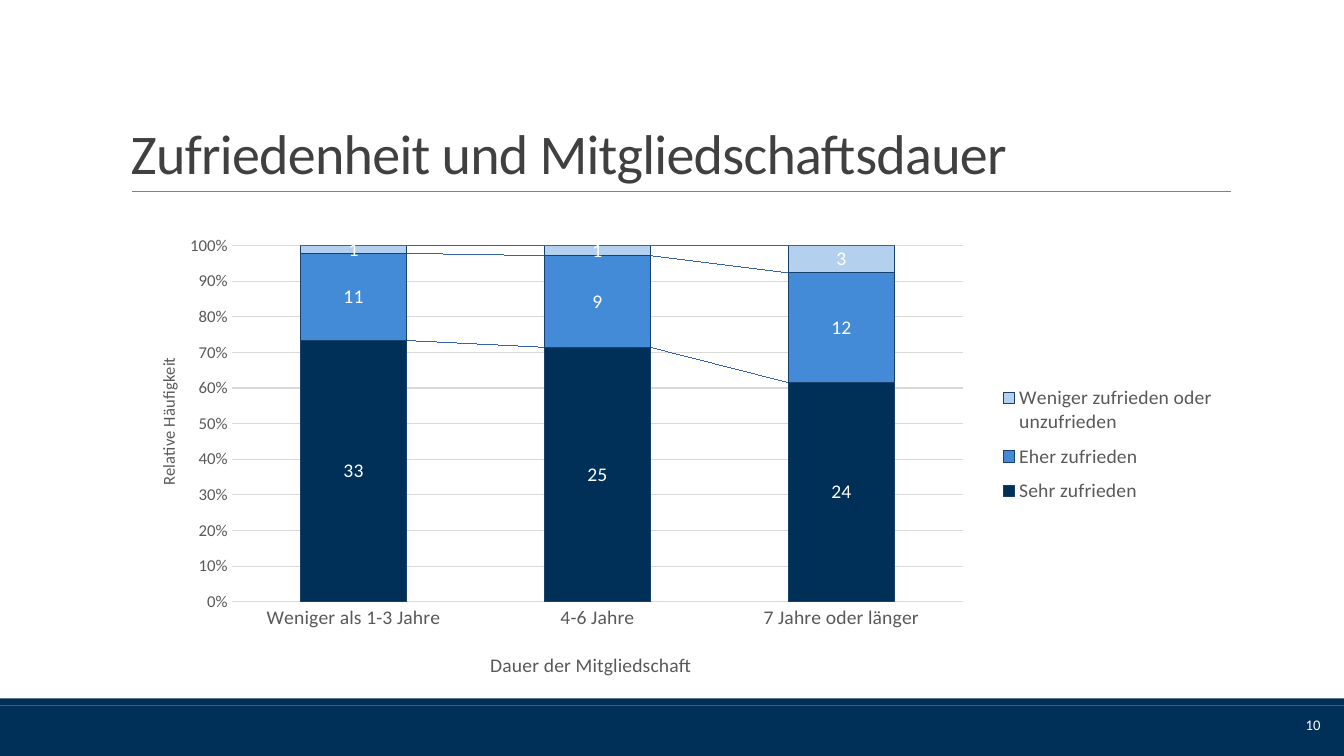
from lxml import etree
from pptx import Presentation
from pptx.chart.data import CategoryChartData
from pptx.dml.color import RGBColor
from pptx.enum.chart import XL_CHART_TYPE, XL_LABEL_POSITION, XL_LEGEND_POSITION, XL_TICK_MARK
from pptx.enum.shapes import MSO_CONNECTOR, MSO_SHAPE
from pptx.enum.text import MSO_ANCHOR, PP_ALIGN
from pptx.oxml.ns import qn
from pptx.util import Pt

STACKED_100 = XL_CHART_TYPE.COLUMN_STACKED_100
LABEL_CENTER = XL_LABEL_POSITION.CENTER
LEGEND_RIGHT = XL_LEGEND_POSITION.RIGHT
NO_TICKS = XL_TICK_MARK.NONE
RECTANGLE = MSO_SHAPE.RECTANGLE
STRAIGHT = MSO_CONNECTOR.STRAIGHT
BOTTOM, MIDDLE = MSO_ANCHOR.BOTTOM, MSO_ANCHOR.MIDDLE
LEFT, RIGHT = PP_ALIGN.LEFT, PP_ALIGN.RIGHT

EMU_PER_PX = 9525
NAVY, BLUE, PALE, OUTLINE = "003058", "438AD7", "B4D0EF", "17406D"
WHITE, TITLE_GRAY, TEXT_GRAY, RULE_GRAY, GRID_GRAY = "FFFFFF", "404040", "595959", "808080", "D9D9D9"

DURATIONS = ["Weniger als 1-3 Jahre", "4-6 Jahre", "7 Jahre oder länger"]
SATISFACTION = [
    ("Sehr zufrieden", [33, 25, 24], NAVY),
    ("Eher zufrieden", [11, 9, 12], BLUE),
    ("Weniger zufrieden oder unzufrieden", [1, 1, 3], PALE),
]


def px(*lengths):
    return [length * EMU_PER_PX for length in lengths]


def rgb(color):
    return RGBColor.from_string(color)


class SlideBuilder:
    font_name = "Calibri"

    def __init__(self, slide):
        self.slide = slide

    def style(self, font, size, color):
        font.name = self.font_name
        font.size = Pt(size)
        font.bold = False
        font.color.rgb = rgb(color)

    def stroke(self, line, color, width):
        line.color.rgb = rgb(color)
        line.width = Pt(width)

    def band(self, *box):
        band = self.slide.shapes.add_shape(RECTANGLE, *px(*box))
        band.shadow.inherit = False
        band.fill.solid()
        band.fill.fore_color.rgb = rgb(NAVY)
        band.line.fill.background()

    def rule(self, *ends):
        rule = self.slide.shapes.add_connector(STRAIGHT, *px(*ends))
        self.stroke(rule.line, RULE_GRAY, 0.5)
        etree.SubElement(rule._element.spPr, qn("a:effectLst"))

    def text(self, box, words, size, color, anchor, align=LEFT, line_spacing=1.0, tracking=0):
        frame = self.slide.shapes.add_textbox(*px(*box)).text_frame
        frame.word_wrap = True
        frame.vertical_anchor = anchor
        paragraph = frame.paragraphs[0]
        paragraph.alignment = align
        paragraph.line_spacing = line_spacing
        run = paragraph.add_run()
        run.text = words
        self.style(run.font, size, color)
        if tracking:
            run.font._element.set("spc", str(tracking))

    def place(self, part, after, target=None, **position):
        for old in part.findall(qn("c:layout")):
            part.remove(old)
        layout = etree.Element(qn("c:layout"))
        manual = etree.SubElement(layout, qn("c:manualLayout"))
        if target:
            etree.SubElement(manual, qn("c:layoutTarget")).set("val", target)
        for mode in ("xMode", "yMode"):
            etree.SubElement(manual, qn(f"c:{mode}")).set("val", "edge")
        for key, value in position.items():
            etree.SubElement(manual, qn(f"c:{key}")).set("val", str(value))
        if after:
            part.find(qn(after)).addnext(layout)
        else:
            part.insert(0, layout)

    def axis(self, axis, words, size, x, y):
        axis.major_tick_mark = axis.minor_tick_mark = NO_TICKS
        self.style(axis.tick_labels.font, size, TEXT_GRAY)
        title = axis.axis_title
        run = title.text_frame.paragraphs[0].add_run()
        run.text = words
        self.style(run.font, size, TEXT_GRAY)
        self.place(title._element, "c:tx", x=x, y=y)

    def series_lines(self, plot):
        lines = etree.Element(qn("c:serLines"))
        properties = etree.SubElement(lines, qn("c:spPr"))
        stroke = etree.SubElement(properties, qn("a:ln"), w="9525")
        fill = etree.SubElement(stroke, qn("a:solidFill"))
        etree.SubElement(fill, qn("a:srgbClr"), val=OUTLINE)
        plot._element.find(qn("c:overlap")).addnext(lines)

    def stacked_chart(self, box):
        data = CategoryChartData()
        data.categories = DURATIONS
        for name, counts, _ in SATISFACTION:
            data.add_series(name, counts)
        chart = self.slide.shapes.add_chart(STACKED_100, *px(*box), data).chart
        chart.has_title = False
        self.style(chart.font, 12, TEXT_GRAY)

        plot = chart.plots[0]
        plot.gap_width = 130
        plot.overlap = 100
        plot.vary_by_categories = False
        for series, (_, _, color) in zip(plot.series, SATISFACTION):
            series.format.fill.solid()
            series.format.fill.fore_color.rgb = rgb(color)
            self.stroke(series.format.line, OUTLINE, 0.75)
            labels = series.data_labels
            labels.show_value = True
            labels.position = LABEL_CENTER
            self.style(labels.font, 14, WHITE)
        self.series_lines(plot)

        duration, share = chart.category_axis, chart.value_axis
        self.axis(duration, "Dauer der Mitgliedschaft", 14, 0.33, 0.94)
        self.stroke(duration.format.line, GRID_GRAY, 0.75)
        self.axis(share, "Relative Häufigkeit", 12, 0.03, 0.31)
        direction = share.axis_title.text_frame._txBody.bodyPr
        direction.set("rot", "-5400000")
        direction.set("vert", "horz")
        share.format.line.fill.background()
        self.stroke(share.major_gridlines.format.line, GRID_GRAY, 0.75)
        share.minimum_scale, share.maximum_scale, share.major_unit = 0, 1, 0.1
        share.tick_labels.number_format = "0%"
        share.tick_labels.number_format_is_linked = False

        chart.has_legend = True
        legend = chart.legend
        legend.position = LEGEND_RIGHT
        legend.include_in_layout = False
        self.style(legend.font, 14, TEXT_GRAY)
        self.place(legend._element, "c:legendPos", x=0.78, y=0.35, w=0.22, h=0.3)
        self.place(plot._element.getparent(), None, "inner", x=0.1, y=0.07, w=0.66, h=0.77)


def main():
    presentation = Presentation()
    presentation.slide_width, presentation.slide_height = px(1280, 720)
    builder = SlideBuilder(presentation.slides.add_slide(presentation.slide_layouts[6]))
    builder.band(0, 672, 1280, 48)
    builder.band(0, 665, 1280, 7)
    builder.rule(126, 182, 1172, 182)
    builder.text((115, 30, 1056, 152), "Zufriedenheit und Mitgliedschaftsdauer", 40, TITLE_GRAY,
                 BOTTOM, line_spacing=0.85, tracking=-50)
    builder.text((1130, 671, 137, 38), "10", 10.5, WHITE, MIDDLE, RIGHT)
    builder.stacked_chart((115, 203, 1056, 448))
    presentation.save("out.pptx")


if __name__ == "__main__":
    main()
